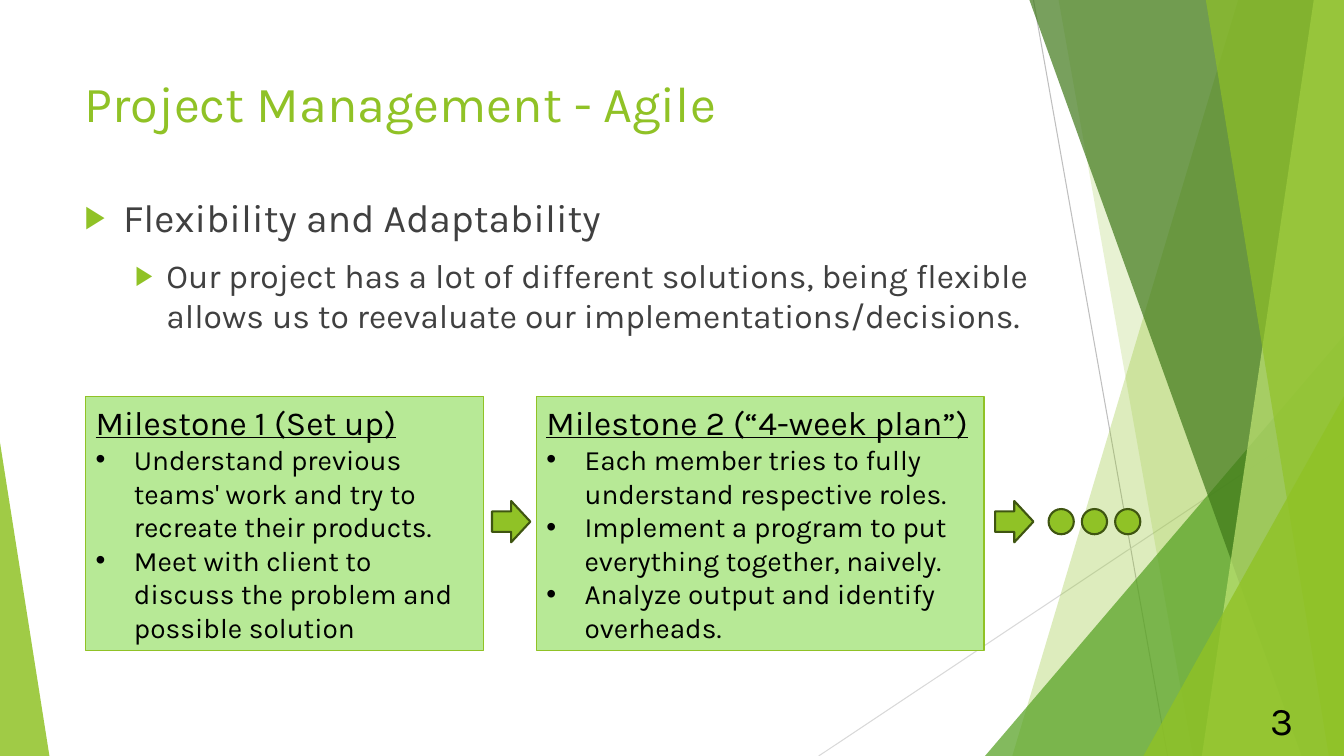
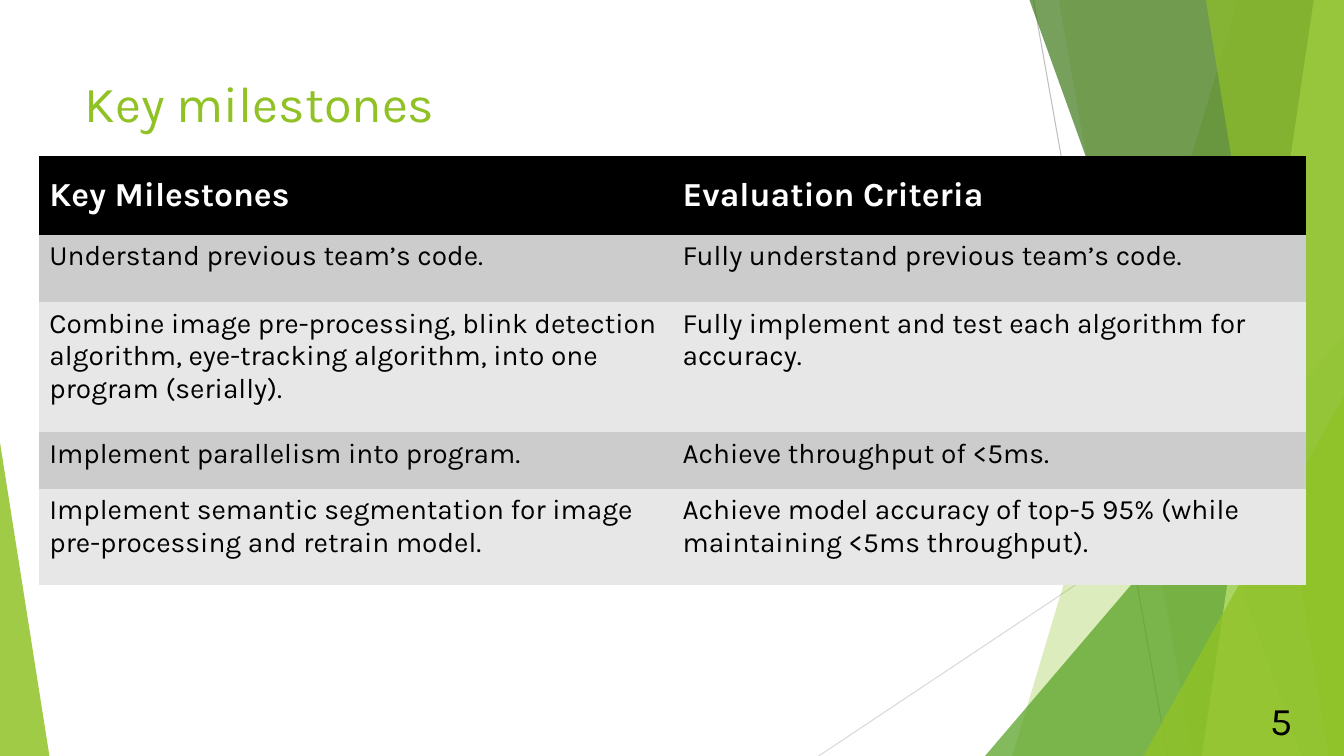
from lxml import etree
from pptx import Presentation
from pptx import util as u
from pptx.dml import color as dml
from pptx.enum import shapes, text
from pptx.oxml import ns

WIDTH, HEIGHT = 13.33, 7.5
FONT = "Karla"
GREEN = dml.RGBColor(0x90, 0xC2, 0x26)
MID_GREEN = dml.RGBColor(0x54, 0xA0, 0x21)
DARK_GREEN = dml.RGBColor(0x3F, 0x78, 0x19)
LIME = dml.RGBColor(0xC0, 0xE4, 0x74)
OUTLINE = dml.RGBColor(0x3F, 0x55, 0x11)
PALE_GREEN = dml.RGBColor(0xB7, 0xE9, 0x96)
BODY_GREY = dml.RGBColor(0x40, 0x40, 0x40)
LINE_GREY = dml.RGBColor(0xBF, 0xBF, 0xBF)
LIGHT_LINE = dml.RGBColor(0xD9, 0xD9, 0xD9)
BAND_DARK = dml.RGBColor(0xCC, 0xCC, 0xCC)
BAND_LIGHT = dml.RGBColor(0xE7, 0xE7, 0xE7)
BLACK = dml.RGBColor(0, 0, 0)
WHITE = dml.RGBColor(0xFF, 0xFF, 0xFF)

TITLE_BOX = (0.74, 0.67, 9.4, 1.44)
BODY_BOX = (0.74, 1.87, 9.81, 2.25)
NUMBER_BOX = (12.5, 6.94, 0.75, 0.4)
NO_GRID_STYLE = "{2D5ABB26-0587-4C30-8999-92F81FD0307C}"

BACKDROP_LINES = [
    ((10.25, 0), (11.58, HEIGHT), LINE_GREY),
    ((WIDTH, 4.03), (8.12, HEIGHT), LIGHT_LINE),
]
BODY_ITEMS = [
    ("Flexibility and Adaptability", 0, 28, 0.38, -0.38),
    ("Our project has a lot of different solutions, being flexible allows us "
     "to reevaluate our implementations/decisions.", 1, 24, 0.81, -0.31),
]
MILESTONES = [
    (0.85, 3.95, "Milestone 1 (Set up)", [
        "Understand previous teams' work and try to recreate their products.",
        "Meet with client to discuss the problem and possible solution",
    ]),
    (5.32, 4.44, "Milestone 2 (“4-week plan”)", [
        "Each member tries to fully understand respective roles.",
        "Implement a program to put everything together, naively.",
        "Analyze output and identify overheads.",
    ]),
]
TABLE_ROWS = [
    (0.78, "Key Milestones", "Evaluation Criteria"),
    (0.67, "Understand previous team’s code.",
     "Fully understand previous team’s code."),
    (1.29, "Combine image pre-processing, blink detection algorithm, "
     "eye-tracking algorithm, into one program (serially).",
     "Fully implement and test each algorithm for accuracy."),
    (0.56, "Implement parallelism into program.", "Achieve throughput of <5ms."),
    (0.95, "Implement semantic segmentation for image pre-processing and "
     "retrain model.",
     "Achieve model accuracy of top-5 95% (while maintaining <5ms throughput)."),
]


def inches(*values):
    return [u.Inches(value) for value in values]


def apply(target, values):
    for name, value in values.items():
        setattr(target, name, value)


def place(shape, box):
    apply(shape, dict(zip(("left", "top", "width", "height"), inches(*box))))


def write(paragraph, content, size, color, **extra):
    paragraph.alignment = text.PP_ALIGN.LEFT
    run = paragraph.add_run()
    run.text = content
    apply(run.font, {"name": FONT, "size": u.Pt(size), **extra})
    run.font.color.rgb = color


def add_bullet(paragraph, character, margin, indent, color=None, percent=100):
    properties = paragraph._p.get_or_add_pPr()
    apply_margins = {"marL": margin, "indent": indent}
    for name, value in apply_margins.items():
        properties.set(name, str(u.Inches(value)))
    if color is not None:
        bullet_color = etree.SubElement(properties, ns.qn("a:buClr"))
        etree.SubElement(bullet_color, ns.qn("a:srgbClr"), val=str(color))
    etree.SubElement(properties, ns.qn("a:buSzPct"), val=str(percent * 1000))
    etree.SubElement(properties, ns.qn("a:buFont"), typeface="Arial")
    etree.SubElement(properties, ns.qn("a:buChar"), char=character)


def paint(shape, fill, outline=None, weight=0.75):
    shape.shadow.inherit = False
    shape.fill.solid()
    shape.fill.fore_color.rgb = fill
    if outline is None:
        shape.line.fill.background()
    else:
        shape.line.color.rgb = outline
        shape.line.width = u.Pt(weight)


def paint_translucent(shape, fill, opacity):
    paint(shape, fill)
    for element in shape.element.iter(ns.qn("a:srgbClr")):
        etree.SubElement(element, ns.qn("a:alpha"), val=str(opacity * 1000))


def add_line(group, start, end, color):
    line = group.shapes.add_connector(
        shapes.MSO_CONNECTOR.STRAIGHT, *inches(*start, *end))
    line.line.color.rgb = color
    line.line.width = u.Pt(0.75)
    properties = line.element.find(ns.qn("p:spPr"))
    etree.SubElement(properties, ns.qn("a:effectLst"))


def add_ribbon(group, top_left, bottom_left):
    builder = group.shapes.build_freeform(*inches(top_left, 0))
    corners = [(WIDTH, 0), (WIDTH, HEIGHT), (bottom_left, HEIGHT)]
    builder.add_line_segments([inches(*corner) for corner in corners])
    return builder.convert_to_shape()


def add_wedge(group, left, top, width, apex):
    wedge = group.shapes.add_shape(
        shapes.MSO_SHAPE.ISOSCELES_TRIANGLE,
        *inches(left, top, width, HEIGHT - top))
    wedge.adjustments[0] = apex
    return wedge


BACKDROP_PIECES = [
    (add_ribbon, (12.28, 10.04), GREEN, 30),
    (add_ribbon, (10.5, 11.83), GREEN, 20),
    (add_wedge, (9.77, 3.33, 3.56, 1), MID_GREEN, 72),
    (add_ribbon, (10.21, 12.91), DARK_GREEN, 70),
    (add_ribbon, (13.03, 11.92), LIME, 70),
    (add_ribbon, (11.96, 13.18), GREEN, 65),
    (add_wedge, (11.34, 3.93, 1.99, 1), GREEN, 80),
    (add_wedge, (0, 4.39, 0.49, 0), GREEN, 85),
]


def move_backdrop_to_master(presentation, slide):
    group = slide.shapes.add_group_shape()
    for start, end, color in BACKDROP_LINES:
        add_line(group, start, end, color)
    for add_piece, geometry, color, opacity in BACKDROP_PIECES:
        paint_translucent(add_piece(group, *geometry), color, opacity)
    master_tree = presentation.slide_master.shapes.element
    master_tree.insert(2, group.element)
    for number, element in enumerate(master_tree.iter(ns.qn("p:cNvPr")), 1):
        element.set("id", str(number))


def fill_placeholder(placeholder, box):
    place(placeholder, box)
    frame = placeholder.text_frame
    apply(frame, {"word_wrap": True, "auto_size": text.MSO_AUTO_SIZE.NONE,
                  "vertical_anchor": text.MSO_ANCHOR.TOP})
    return frame


def add_slide(presentation, layout, title, number):
    slide = presentation.slides.add_slide(presentation.slide_layouts[layout])
    frame = fill_placeholder(slide.shapes.title, TITLE_BOX)
    write(frame.paragraphs[0], title, 36, GREEN)
    number_frame = slide.shapes.add_textbox(*inches(*NUMBER_BOX)).text_frame
    apply(number_frame, {"word_wrap": True,
                         "vertical_anchor": text.MSO_ANCHOR.MIDDLE})
    write(number_frame.paragraphs[0], str(number), 28, BLACK)
    return slide


def add_body(slide):
    frame = fill_placeholder(slide.placeholders[1], BODY_BOX)
    for index, (content, level, size, margin, indent) in enumerate(BODY_ITEMS):
        paragraph = frame.add_paragraph() if index else frame.paragraphs[0]
        apply(paragraph, {"level": level, "space_before": u.Pt(10)})
        write(paragraph, content, size, BODY_GREY)
        add_bullet(paragraph, "▶", margin, indent, GREEN, 80)


def add_milestone(slide, left, width, heading, items):
    box = slide.shapes.add_shape(
        shapes.MSO_SHAPE.RECTANGLE, *inches(left, 3.93, width, 2.52))
    paint(box, PALE_GREEN, GREEN)
    frame = box.text_frame
    apply(frame, {"word_wrap": True,
                  "auto_size": text.MSO_AUTO_SIZE.SHAPE_TO_FIT_TEXT,
                  "vertical_anchor": text.MSO_ANCHOR.MIDDLE})
    write(frame.paragraphs[0], heading, 24, BLACK, underline=True)
    for item in items:
        paragraph = frame.add_paragraph()
        write(paragraph, item, 20, BLACK)
        add_bullet(paragraph, "•", 0.38, -0.38)


def add_marker(slide, preset, box):
    paint(slide.shapes.add_shape(preset, *inches(*box)), GREEN, OUTLINE, 1.5)


def add_milestone_flow(slide):
    for milestone in MILESTONES:
        add_milestone(slide, *milestone)
    for left in (4.88, 9.87):
        add_marker(slide, shapes.MSO_SHAPE.RIGHT_ARROW, (left, 4.97, 0.38, 0.41))
    for index in range(3):
        add_marker(slide, shapes.MSO_SHAPE.OVAL,
                   (10.4 + 0.33 * index, 5.05, 0.25, 0.25))


def add_milestone_table(slide):
    heights = [row[0] for row in TABLE_ROWS]
    frame = slide.shapes.add_table(
        len(TABLE_ROWS), 2, *inches(0.39, 1.55, 12.56, sum(heights)))
    for element in frame.element.iter(ns.qn("a:tableStyleId")):
        element.text = NO_GRID_STYLE
    table = frame.table
    for row_index, (height, *contents) in enumerate(TABLE_ROWS):
        table.rows[row_index].height = u.Inches(height)
        header = row_index == 0
        band = BAND_DARK if row_index % 2 else BAND_LIGHT
        for column_index, content in enumerate(contents):
            cell = table.cell(row_index, column_index)
            cell.fill.solid()
            cell.fill.fore_color.rgb = BLACK if header else band
            cell.vertical_anchor = (
                text.MSO_ANCHOR.MIDDLE if header else text.MSO_ANCHOR.TOP)
            write(cell.text_frame.paragraphs[0], content, 24 if header else 20,
                  WHITE if header else BLACK, bold=header)


def main():
    presentation = Presentation()
    apply(presentation, {"slide_width": u.Inches(WIDTH),
                         "slide_height": u.Inches(HEIGHT)})
    agile = add_slide(presentation, 1, "Project Management - Agile", 3)
    move_backdrop_to_master(presentation, agile)
    add_body(agile)
    add_milestone_flow(agile)
    milestones = add_slide(presentation, 5, "Key milestones", 5)
    add_milestone_table(milestones)
    presentation.save("out.pptx")


if __name__ == "__main__":
    main()
